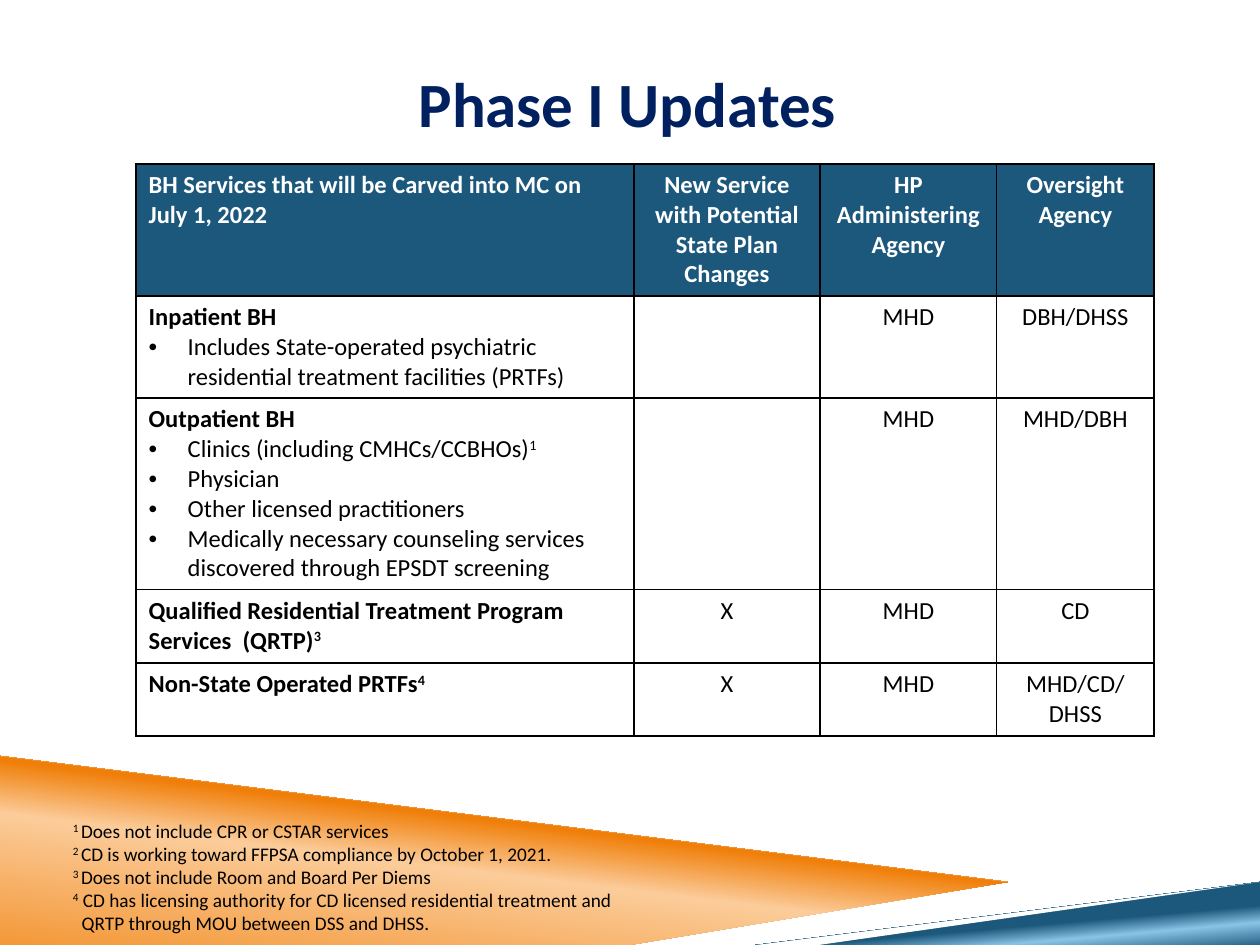
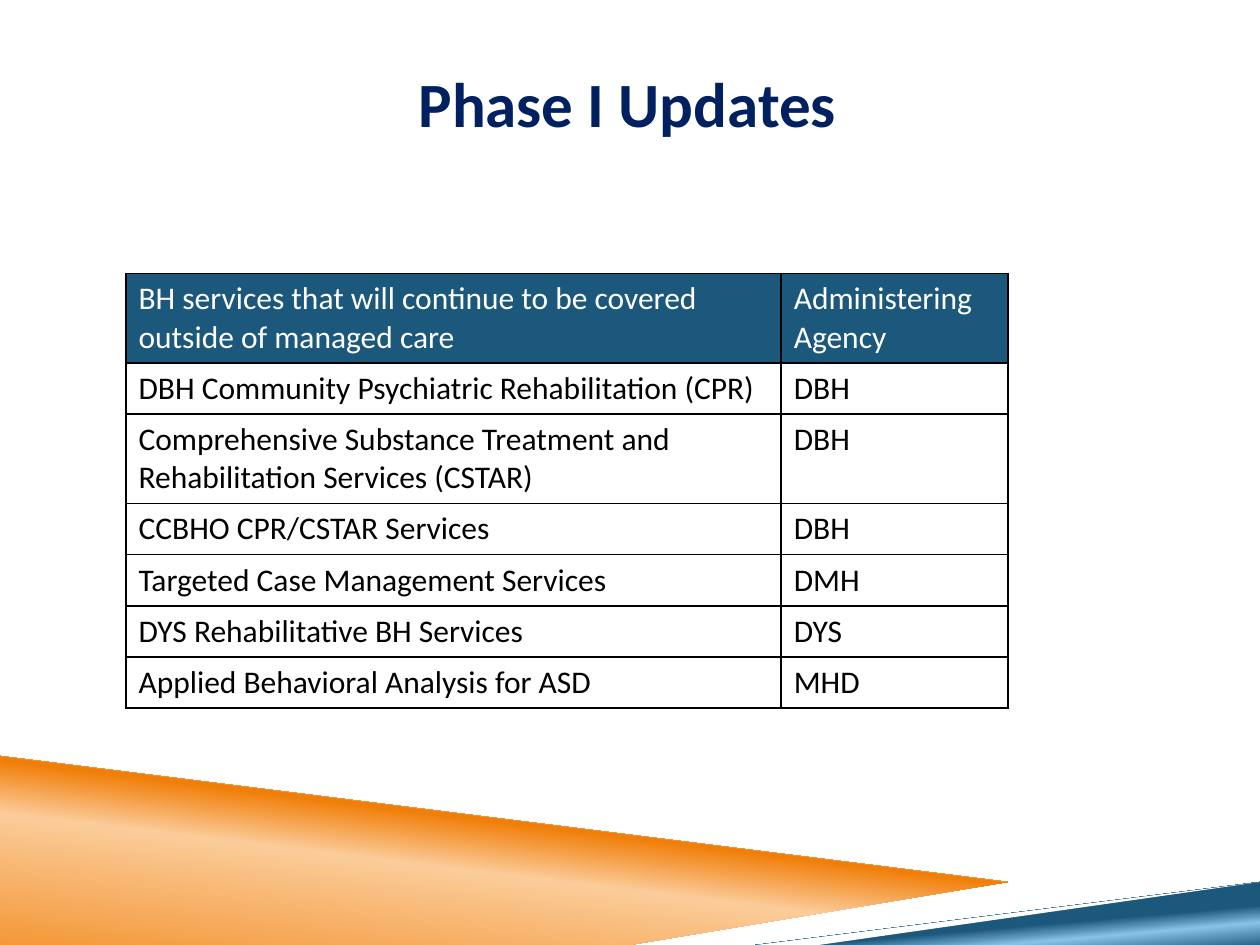
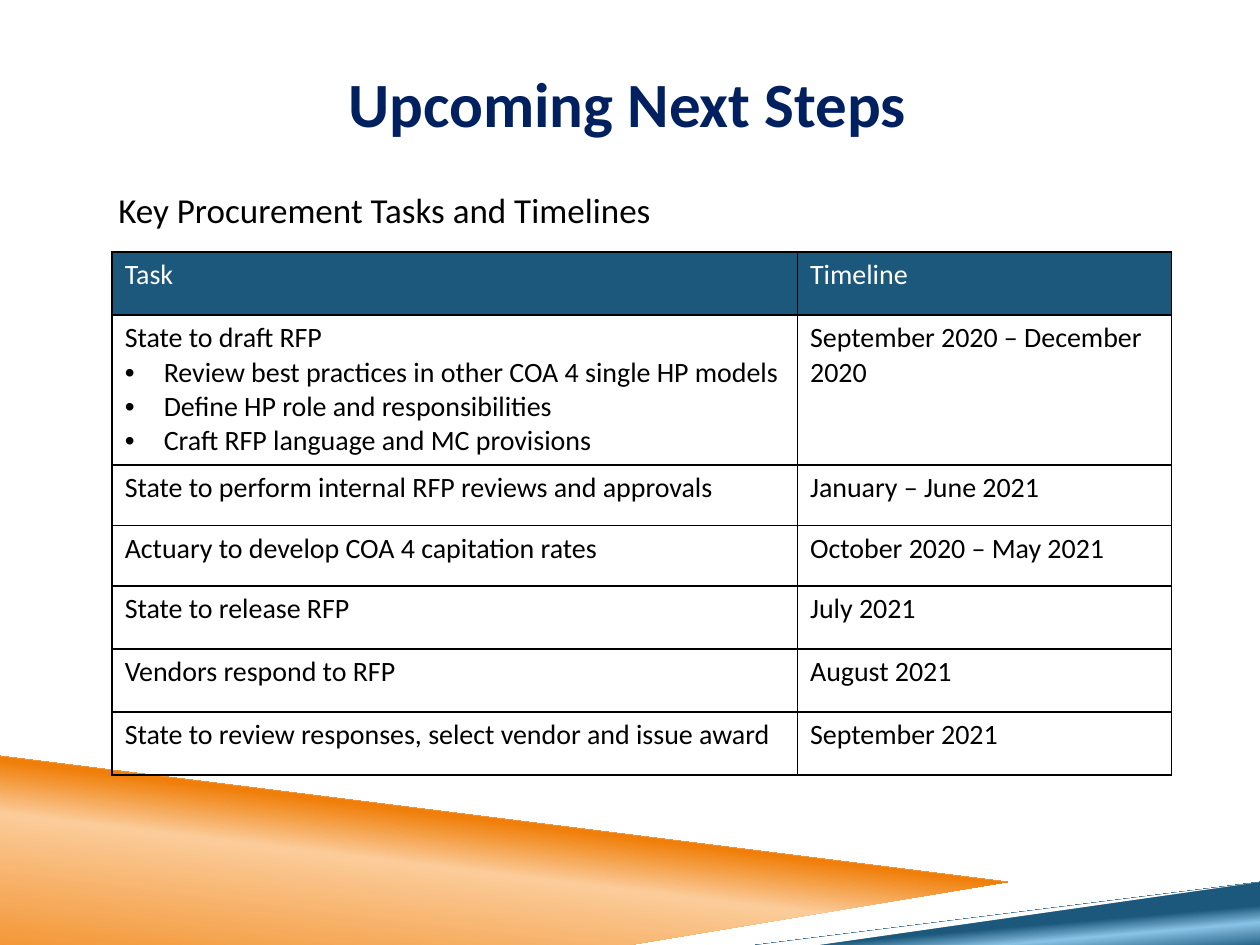
import pptx
import pptx.dml.color
import pptx.enum.text
import pptx.oxml
import pptx.oxml.ns
import pptx.util

Inches = pptx.util.Inches
FONT = "Calibri"
NAVY, BLUE, LIGHT_BLUE = "002060", "1B587C", "89C3E5"
ORANGE, LIGHT_ORANGE = "F07F09", "FBCC9A"
BLACK, WHITE = "000000", "FFFFFF"
BULLET = "• "
SUPERSCRIPT = "^"
BULLET_INDENT = 0.31

BANDS = [
    {"points": [(0, 5.97), (7.92, 6.92), (2, 7.5), (0, 7.5)],
     "stops": [(0, ORANGE), (52, LIGHT_ORANGE), (66, ORANGE)], "angle": 277},
    {"points": [(1.98, 7.5), (10, 6.72), (10, 7.5)],
     "stops": [(28, BLUE), (40, LIGHT_BLUE), (48, BLUE)], "angle": 265},
    {"points": [(0, 5.92), (0, 6), (7.9, 6.93), (8.32, 6.9)]},
    {"points": [(10, 6.69), (1.84, 7.5), (2.66, 7.5), (10, 6.77)]},
]

SLIDES = [
    {
        "title": "Phase I Updates",
        "table": {
            "at": (1.08, 1.3), "size": 14, "bold_labels": True, "centred": True,
            "columns": [3.95, 1.48, 1.4, 1.25],
            "heights": [1.05, 0.81, 1.52, 0.58, 0.58],
            "rows": [
                (["BH Services that will be Carved into MC on July 1, 2022"],
                 "New Service with Potential State Plan Changes",
                 "HP Administering Agency", "Oversight Agency"),
                (["Inpatient BH",
                  "• Includes State-operated psychiatric residential treatment facilities (PRTFs)"],
                 "", "MHD", "DBH/DHSS"),
                (["Outpatient BH",
                  "• Clinics (including CMHCs/CCBHOs)^1",
                  "• Physician",
                  "• Other licensed practitioners",
                  "• Medically necessary counseling services discovered through EPSDT screening"],
                 "", "MHD", "MHD/DBH"),
                (["Qualified Residential Treatment Program Services  (QRTP)^3"], "X", "MHD", "CD"),
                (["Non-State Operated PRTFs^4"], "X", "MHD", "MHD/CD/DHSS"),
            ],
        },
        "text": {
            "at": (0.48, 6.45, 8.25, 1.03), "size": 11, "last_indent": 0.07,
            "lines": [
                "^1 ^Does not include CPR or CSTAR services",
                "^2 ^CD is working toward FFPSA compliance by October 1, 2021.",
                "^3 ^Does not include Room and Board Per Diems",
                "^4^ CD has licensing authority for CD licensed residential treatment and",
                "QRTP through MOU between DSS and DHSS.",
            ],
        },
    },
    {
        "title": "Phase I Updates",
        "table": {
            "at": (1, 2.17), "size": 18,
            "columns": [5.2, 1.8],
            "heights": [0.7, 0.4, 0.7, 0.4, 0.4, 0.4, 0.4],
            "rows": [
                (["BH services that will continue to be covered outside of managed care"],
                 "Administering Agency"),
                (["DBH Community Psychiatric Rehabilitation (CPR)"], "DBH"),
                (["Comprehensive Substance Treatment and Rehabilitation Services (CSTAR)"], "DBH"),
                (["CCBHO CPR/CSTAR Services"], "DBH"),
                (["Targeted Case Management Services"], "DMH"),
                (["DYS Rehabilitative BH Services"], "DYS"),
                (["Applied Behavioral Analysis for ASD"], "MHD"),
            ],
        },
    },
    {
        "title": "Upcoming Next Steps",
        "table": {
            "at": (0.89, 2), "size": 16,
            "columns": [5.44, 2.97],
            "heights": [0.5, 1.19, 0.48, 0.48, 0.5, 0.5, 0.5],
            "rows": [
                (["Task"], "Timeline"),
                (["State to draft RFP",
                  "• Review best practices in other COA 4 single HP models",
                  "• Define HP role and responsibilities",
                  "• Craft RFP language and MC provisions"],
                 "September 2020 – December 2020"),
                (["State to perform internal RFP reviews and approvals"], "January – June 2021"),
                (["Actuary to develop COA 4 capitation rates"], "October 2020 – May 2021"),
                (["State to release RFP"], "July 2021"),
                (["Vendors respond to RFP"], "August 2021"),
                (["State to review responses, select vendor and issue award"], "September 2021"),
            ],
        },
        "text": {
            "at": (0.84, 1.45, 8.42, 0.44), "size": 20,
            "lines": ["Key Procurement Tasks and Timelines"],
        },
    },
]


def colour(value):
    return pptx.dml.color.RGBColor.from_string(value)


def xml(markup):
    start, rest = markup.split(">", 1)
    namespace = pptx.oxml.ns.nsdecls("a")
    return pptx.oxml.parse_xml(f"{start} {namespace}>{rest}")


def solid_xml(value):
    return f'<a:solidFill><a:srgbClr val="{value}"/></a:solidFill>'


def indent(paragraph, left, first=0):
    properties = paragraph._p.get_or_add_pPr()
    properties.set("marL", str(Inches(left)))
    properties.set("indent", str(Inches(first)))
    return properties


def write_lines(text_frame, lines, size, text_colour, bold=False, centred=False):
    for index, line in enumerate(lines):
        paragraph = text_frame.paragraphs[0] if index == 0 else text_frame.add_paragraph()
        if centred:
            paragraph.alignment = pptx.enum.text.PP_ALIGN.CENTER
        bulleted = line.startswith(BULLET)
        if bulleted:
            properties = indent(paragraph, BULLET_INDENT, -BULLET_INDENT)
            properties.append(xml('<a:buFont typeface="Arial"></a:buFont>'))
            properties.append(xml('<a:buChar char="•"></a:buChar>'))
        paragraph.font.size = pptx.util.Pt(size)
        for position, piece in enumerate(line.removeprefix(BULLET).split(SUPERSCRIPT)):
            if not piece:
                continue
            run = paragraph.add_run()
            run.text = piece
            run.font.name = FONT
            run.font.size = pptx.util.Pt(size)
            run.font.bold = bold and not bulleted
            run.font.color.rgb = colour(text_colour)
            if position % 2:
                run._r.get_or_add_rPr().set("baseline", "30000")


def add_bands(slide):
    for band in BANDS:
        start, *others = band["points"]
        builder = slide.shapes.build_freeform(*start, scale=Inches(1))
        builder.add_line_segments(others, close=True)
        shape = builder.convert_to_shape()
        shape.shadow.inherit = False
        shape.line.fill.background()
        if "stops" not in band:
            shape.fill.solid()
            shape.fill.fore_color.rgb = colour(WHITE)
            continue
        shape.fill.gradient()
        gradient = shape._element.spPr.find(pptx.oxml.ns.qn("a:gradFill"))
        stops = "".join(f'<a:gs pos="{place * 1000}"><a:srgbClr val="{value}"/></a:gs>'
                        for place, value in band["stops"])
        gradient.getparent().replace(gradient, xml(
            f'<a:gradFill rotWithShape="1"><a:gsLst>{stops}</a:gsLst>'
            f'<a:lin ang="{band["angle"] * 60000}" scaled="0"/></a:gradFill>'))


def add_title(slide, text):
    title = slide.shapes.title
    title.left, title.top, title.width, title.height = map(Inches, (0.67, 0.33, 8.62, 0.96))
    text_frame = title.text_frame
    text_frame.margin_left = text_frame.margin_right = 0
    text_frame.vertical_anchor = pptx.enum.text.MSO_ANCHOR.MIDDLE
    write_lines(text_frame, [text], 36, NAVY, bold=True, centred=True)


def add_borders(cell):
    properties = cell._tc.get_or_add_tcPr()
    for index, side in enumerate("LRTB"):
        properties.insert(index, xml(f'<a:ln{side} w="12700">{solid_xml(BLACK)}</a:ln{side}>'))


def add_service_table(slide, content):
    rows, columns, heights = content["rows"], content["columns"], content["heights"]
    left, top = content["at"]
    table = slide.shapes.add_table(
        len(rows), len(columns), Inches(left), Inches(top),
        Inches(sum(columns)), Inches(sum(heights))).table
    table.horz_banding = False
    for column, width in zip(table.columns, columns):
        column.width = Inches(width)
    for row, height in zip(table.rows, heights):
        row.height = Inches(height)
    for row_index, row in enumerate(rows):
        header = row_index == 0
        for column_index, value in enumerate(row):
            label = column_index == 0
            cell = table.cell(row_index, column_index)
            if header:
                cell.fill.solid()
                cell.fill.fore_color.rgb = colour(BLUE)
            else:
                cell.fill.background()
            add_borders(cell)
            write_lines(cell.text_frame, value if label else [value], content["size"],
                        WHITE if header else BLACK,
                        bold=content.get("bold_labels", False) and (header or label),
                        centred=content.get("centred", False) and not label)


def add_text(slide, content):
    text_frame = slide.shapes.add_textbox(*map(Inches, content["at"])).text_frame
    text_frame.word_wrap = True
    write_lines(text_frame, content["lines"], content["size"], BLACK)
    if "last_indent" in content:
        indent(text_frame.paragraphs[-1], content["last_indent"])


def main():
    presentation = pptx.Presentation()
    presentation.slide_width, presentation.slide_height = Inches(10), Inches(7.5)
    for content in SLIDES:
        slide = presentation.slides.add_slide(presentation.slide_layouts[5])
        add_bands(slide)
        add_title(slide, content["title"])
        add_service_table(slide, content["table"])
        if "text" in content:
            add_text(slide, content["text"])
    presentation.save("out.pptx")


if __name__ == "__main__":
    main()
